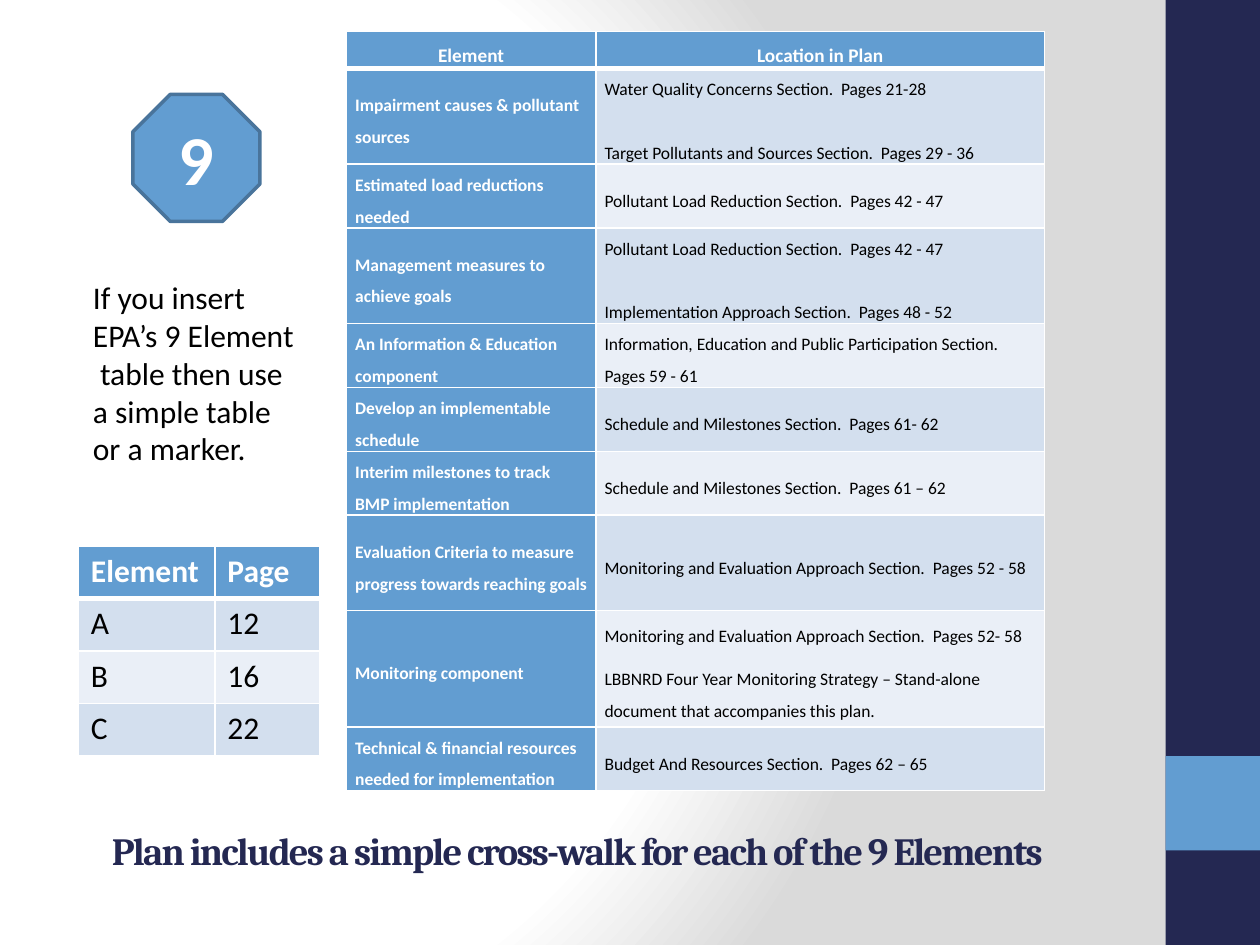
from dataclasses import dataclass

import lxml.etree
import pptx
import pptx.dml.color
import pptx.enum.shapes
import pptx.enum.text
import pptx.oxml.ns
import pptx.util

Pt = pptx.util.Pt
qn = pptx.oxml.ns.qn
Anchor = pptx.enum.text.MSO_ANCHOR
Align = pptx.enum.text.PP_ALIGN
Preset = pptx.enum.shapes.MSO_SHAPE

NAVY, BLUE, DARK_BLUE = "242852", "629DD1", "49749B"
PALE, PALER, WHITE, BLACK, GREY = "D3DFEE", "EAEFF7", "FFFFFF", "000000", "DADADA"


@dataclass
class Box:
    left: float
    top: float
    width: float
    height: float

    def lengths(self) -> list:
        return [Pt(n) for n in (self.left, self.top, self.width, self.height)]


@dataclass
class Row:
    height: float
    cells: tuple[str, str]
    gap: float = 0


@dataclass
class Grid:
    left: float
    top: float
    columns: tuple[float, float]
    rows: list[Row]
    header_size: float
    body_size: float
    labelled: bool


def rgb(value: str):
    return pptx.dml.color.RGBColor.from_string(value)


def style(frame, size: float, color: str, bold: bool = False, font: str = "Calibri", align=Align.LEFT) -> None:
    for paragraph in frame.paragraphs:
        paragraph.alignment = align
        for run in paragraph.runs:
            run.font.name = font
            run.font.size = Pt(size)
            run.font.bold = bold
            run.font.color.rgb = rgb(color)


def add_block(slide, preset, box: Box, fill: str, line: str | None = None):
    block = slide.shapes.add_shape(preset, *box.lengths())
    block.shadow.inherit = False
    block.fill.solid()
    block.fill.fore_color.rgb = rgb(fill)
    if line:
        block.line.color.rgb = rgb(line)
        block.line.width = Pt(2)
    else:
        block.line.fill.background()
    return block


def add_stops(gradient, stops: list[tuple[int, str]]) -> None:
    stop_list = lxml.etree.SubElement(gradient, qn("a:gsLst"))
    for percent, color in stops:
        stop = lxml.etree.SubElement(stop_list, qn("a:gs"), pos=str(percent * 1000))
        lxml.etree.SubElement(stop, qn("a:srgbClr"), val=color)


def fill_background(slide) -> None:
    slide.background.fill.solid()
    solid = slide.element.find(".//" + qn("p:bgPr")).find(qn("a:solidFill"))
    gradient = lxml.etree.Element(qn("a:gradFill"), rotWithShape="1")
    add_stops(gradient, [(0, WHITE), (75, WHITE), (100, GREY)])
    circle = lxml.etree.SubElement(gradient, qn("a:path"), path="circle")
    lxml.etree.SubElement(circle, qn("a:fillToRect"), l="20000", t="50000", r="100000", b="50000")
    solid.getparent().replace(solid, gradient)


def set_borders(cell, top: float, bottom: float) -> None:
    properties = cell._tc.get_or_add_tcPr()
    sides = {"a:lnL": 1, "a:lnR": 1, "a:lnT": top, "a:lnB": bottom}
    for position, (side, width) in enumerate(sides.items()):
        line = lxml.etree.Element(qn(side), w=str(Pt(width)))
        solid = lxml.etree.SubElement(line, qn("a:solidFill"))
        lxml.etree.SubElement(solid, qn("a:srgbClr"), val=WHITE)
        properties.insert(position, line)


def add_grid(slide, grid: Grid) -> None:
    box = Box(grid.left, grid.top, sum(grid.columns), sum(row.height for row in grid.rows))
    table = slide.shapes.add_table(len(grid.rows), len(grid.columns), *box.lengths()).table
    for column, width in zip(table.columns, grid.columns):
        column.width = Pt(width)
    for r, row in enumerate(grid.rows):
        table.rows[r].height = Pt(row.height)
        header = r == 0
        for c, text in enumerate(row.cells):
            cell = table.cell(r, c)
            strong = header or (grid.labelled and c == 0)
            cell.text_frame.text = text
            centred = header and grid.labelled
            style(cell.text_frame, grid.header_size if header else grid.body_size,
                  WHITE if strong else BLACK, strong, align=Align.CENTER if centred else Align.LEFT)
            cell.fill.solid()
            cell.fill.fore_color.rgb = rgb(BLUE if strong else PALE if r % 2 else PALER)
            set_borders(cell, 3 if r == 1 else 1, 3 if header else 1)
            if grid.labelled:
                cell.vertical_anchor = Anchor.MIDDLE
                cell.margin_left = cell.margin_right = Pt(5)
                cell.margin_top = cell.margin_bottom = 0
                for paragraph in cell.text_frame.paragraphs:
                    paragraph.line_spacing = 1.5
                    if c == 1 and row.gap:
                        paragraph.space_after = Pt(row.gap)
    if grid.labelled:
        table.cell(1, 1).vertical_anchor = Anchor.TOP
        for r in (1, 3):
            table.cell(r, 1).text_frame.paragraphs[-1].space_after = Pt(0)


TWO_LINES, THREE_LINES, BLANK_LINE = 36.5, 54.5, 18.3

CROSSWALK = Grid(198, 18, (142.5, 256.5), [
    Row(21, ("Element", "Location in Plan")),
    Row(THREE_LINES, ("Impairment causes & pollutant sources",
                      "Water Quality Concerns Section.  Pages 21-28\n"
                      "Target Pollutants and Sources Section.  Pages 29 - 36"), BLANK_LINE),
    Row(TWO_LINES, ("Estimated load reductions needed", "Pollutant Load Reduction Section.  Pages 42 - 47")),
    Row(THREE_LINES, ("Management measures to achieve goals",
                      "Pollutant Load Reduction Section.  Pages 42 - 47\n"
                      "Implementation Approach Section.  Pages 48 - 52"), BLANK_LINE),
    Row(TWO_LINES, ("An Information & Education component",
                    "Information, Education and Public Participation Section.  Pages 59 - 61")),
    Row(TWO_LINES, ("Develop an implementable schedule", "Schedule and Milestones Section.  Pages 61- 62")),
    Row(TWO_LINES, ("Interim milestones to track  BMP implementation",
                    "Schedule and Milestones Section.  Pages 61 – 62")),
    Row(THREE_LINES, ("Evaluation Criteria to measure progress towards reaching goals",
                      "Monitoring and Evaluation Approach Section.  Pages 52 - 58")),
    Row(66.5, ("Monitoring component",
               "Monitoring and Evaluation Approach Section.  Pages 52- 58\n"
               "LBBNRD Four Year Monitoring Strategy – Stand-alone document that accompanies this plan."), 6),
    Row(TWO_LINES, ("Technical & financial resources needed for implementation",
                    "Budget And Resources Section.  Pages 62 – 65")),
], 11, 10, True)

PAGE_INDEX = Grid(44.8, 312, (78, 60), [
    Row(30, cells) for cells in (("Element", "Page"), ("A", "12"), ("B", "16"), ("C", "22"))
], 18, 18, False)


def main() -> None:
    deck = pptx.Presentation()
    deck.slide_width, deck.slide_height = Pt(720), Pt(540)
    slide = deck.slides.add_slide(deck.slide_layouts[5])
    fill_background(slide)

    add_block(slide, Preset.RECTANGLE, Box(666, 0, 54, 540), NAVY)
    add_block(slide, Preset.RECTANGLE, Box(666, 432, 54, 54), BLUE)

    title = slide.shapes.title
    title.left, title.top, title.width, title.height = Box(24, 456, 612, 46.8).lengths()
    headline = title.text_frame
    headline.text = "Plan includes a simple cross-walk for each of the 9 Elements"
    headline.auto_size = pptx.enum.text.MSO_AUTO_SIZE.NONE
    headline.vertical_anchor = Anchor.BOTTOM
    style(headline, 22, NAVY, True, "Cambria", Align.CENTER)
    headline.paragraphs[0].runs[0].font._element.set("spc", "-100")

    add_grid(slide, CROSSWALK)

    marker = add_block(slide, Preset.OCTAGON, Box(76, 54, 72.5, 72.5), BLUE, DARK_BLUE)
    marker.text_frame.text = "9"
    marker.text_frame.vertical_anchor = Anchor.MIDDLE
    style(marker.text_frame, 40, WHITE, True, align=Align.CENTER)

    add_grid(slide, PAGE_INDEX)

    advice = slide.shapes.add_textbox(*Box(46, 155.5, 132, 116.5).lengths()).text_frame
    advice.word_wrap = True
    advice.auto_size = pptx.enum.text.MSO_AUTO_SIZE.SHAPE_TO_FIT_TEXT
    advice.text = "If you insert EPA’s 9 Element  table then use a simple table or a marker."
    style(advice, 18, BLACK)

    deck.save("out.pptx")


if __name__ == "__main__":
    main()
